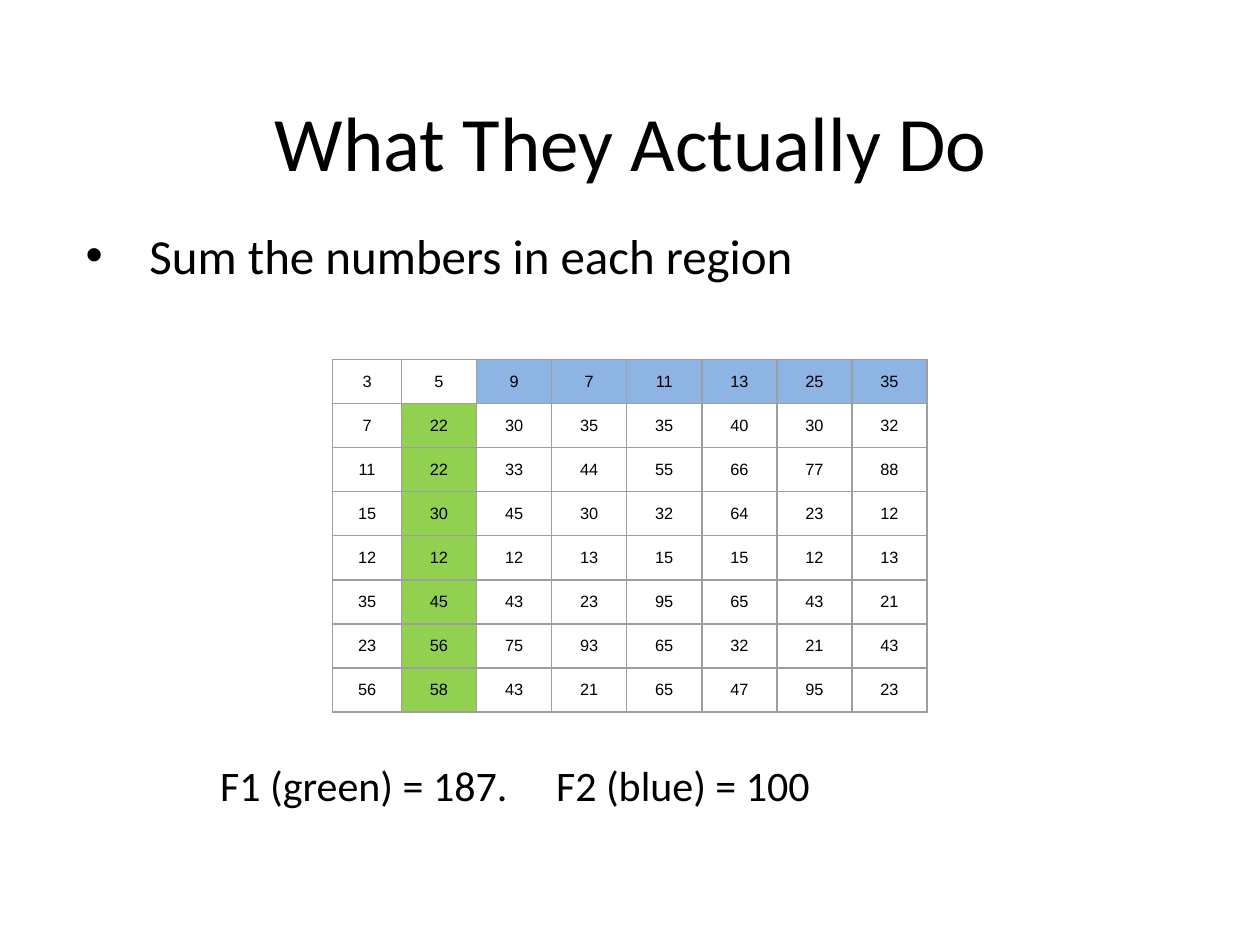
"""Build the slide that sums the numbers in two coloured regions of a grid."""
from lxml.etree import SubElement
from pptx import Presentation
from pptx.dml.color import RGBColor
from pptx.enum.text import MSO_ANCHOR as Anchor, PP_ALIGN as Align
from pptx.oxml.ns import qn
from pptx.util import Inches, Pt

WHITE, BLACK, GREY, GREEN, BLUE = "FFFFFF", "000000", "9E9E9E", "92D050", "8EB4E3"
color = RGBColor.from_string


def pad(holder, anchor):
    holder.margin_left = holder.margin_right = Inches(0.07)
    holder.margin_top = holder.margin_bottom = Inches(0.07)
    holder.vertical_anchor = anchor


def write(frame, text, size, font="Calibri", align=Align.LEFT, before=0, margin=0, indent=0):
    frame.word_wrap = True
    line = frame.add_paragraph() if frame.text else frame.paragraphs[0]
    line.alignment, line.space_before = align, Pt(before)
    run = line.add_run()
    run.text = text
    run.font.size, run.font.name = Pt(size), font
    run.font.color.rgb = color(BLACK)
    layout = line._p.get_or_add_pPr()
    layout.set("marL", str(Inches(margin)))
    layout.set("indent", str(Inches(indent)))
    return layout


deck = Presentation()
deck.slide_width = Inches(7.5)
deck.slide_height = deck.slide_width * 3 // 4
slide = deck.slides.add_slide(deck.slide_layouts[6])
left, width = Inches(0.26), Inches(6.99)

title = slide.shapes.add_textbox(left, Inches(0.49), width, Inches(0.63)).text_frame
pad(title, Anchor.TOP)
write(title, "What They Actually Do", 33, align=Align.CENTER)

body = slide.shapes.add_textbox(left, Inches(1.27), width, Inches(3.74)).text_frame
pad(body, Anchor.TOP)
task = write(body, "Sum the numbers in each region", 21, margin=0.56, indent=-0.38)
SubElement(task, qn("a:buFont"), typeface="Arial")
SubElement(task, qn("a:buChar"), char="•")
sums = write(body, "F1 (green) = 187.\tF2 (blue) = 100", 18, before=204, margin=0.98)
stops = SubElement(sums, qn("a:tabLst"))
SubElement(stops, qn("a:tab"), pos=str(Inches(3.08)), algn="l")

numbers = [
    [3, 5, 9, 7, 11, 13, 25, 35],
    [7, 22, 30, 35, 35, 40, 30, 32],
    [11, 22, 33, 44, 55, 66, 77, 88],
    [15, 30, 45, 30, 32, 64, 23, 12],
    [12, 12, 12, 13, 15, 15, 12, 13],
    [35, 45, 43, 23, 95, 65, 43, 21],
    [23, 56, 75, 93, 65, 32, 21, 43],
    [56, 58, 43, 21, 65, 47, 95, 23],
]
count = len(numbers)
grid_width, grid_height, first_width = Inches(3.54), Inches(2.1), Inches(0.41)
grid = slide.shapes.add_table(
    count, count, Inches(1.98), Inches(2.14), grid_width, grid_height).table
grid.first_row = grid.horz_banding = False
for i in range(count):
    grid.rows[i].height = grid_height // count
    grid.columns[i].width = (grid_width - first_width) // (count - 1) if i else first_width

for r, row in enumerate(numbers):
    for c, number in enumerate(row):
        cell = grid.cell(r, c)
        pad(cell, Anchor.MIDDLE)
        write(cell.text_frame, str(number), 7, font="Arial", align=Align.CENTER)
        borders = cell._tc.get_or_add_tcPr()
        for side in ("lnL", "lnR", "lnT", "lnB"):
            border = SubElement(borders, qn(f"a:{side}"), w=str(Pt(0.75)))
            paint = SubElement(border, qn("a:solidFill"))
            SubElement(paint, qn("a:srgbClr"), val=GREY)
        region = BLUE if r == 0 and c > 1 else GREEN if r > 0 and c == 1 else WHITE
        cell.fill.solid()
        cell.fill.fore_color.rgb = color(region)

deck.save("out.pptx")
